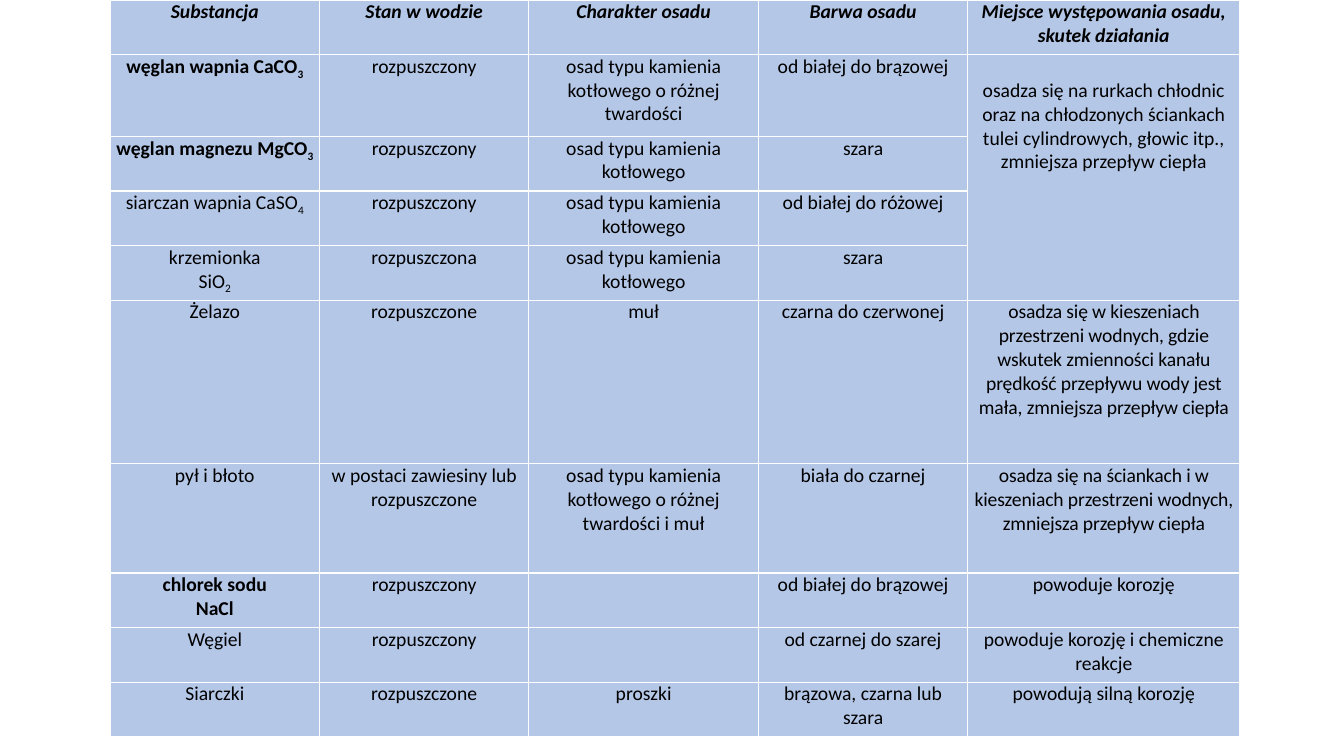
from lxml import etree
from pptx import Presentation, util as u
from pptx.dml.color import RGBColor
from pptx.enum import text
from pptx.oxml.ns import qn

COLORS = {"cell": "B4C7E7", "ink": "000000", "border": "FFFFFF"}
FONT, SIZE = "Calibri", 14
COLUMN_WIDTHS = [2.08, 2.07, 2.28, 2.07, 2.7]
ROW_UNITS = [1, 1.5, 1, 1, 1, 3, 2, 1, 1, 1]
LINE_HEIGHT = 0.24

# Markup: "~" no-break space, "_" subscript that follows, "\n" new paragraph
HEADER = ["Substancja", "Stan w wodzie", "Charakter osadu", "Barwa osadu",
          "Miejsce występowania osadu, skutek działania"]
SCALE = "osad typu kamienia kotłowego"
COOLING = ("osadza się na rurkach chłodnic oraz na~chłodzonych ściankach "
           "tulei cylindrowych, głowic itp.,\nzmniejsza przepływ ciepła")
POCKETS = ("osadza się w~kieszeniach przestrzeni wodnych, gdzie wskutek "
           "zmienności kanału prędkość przepływu wody jest mała, "
           "zmniejsza przepływ ciepła")
WALLS = ("osadza się na~ściankach i~w kieszeniach przestrzeni wodnych, "
         "zmniejsza przepływ ciepła")
SUBSTANCES = [
    ["węglan wapnia CaCO_3", "rozpuszczony", SCALE + " o różnej twardości",
     "od białej do~brązowej", COOLING],
    ["węglan magnezu MgCO_3", "rozpuszczony", SCALE, "szara", ""],
    ["siarczan wapnia CaSO_4", "rozpuszczony", SCALE, "od białej do różowej", ""],
    ["krzemionka\nSiO_2", "rozpuszczona", SCALE, "szara", ""],
    ["Żelazo", "rozpuszczone", "muł", "czarna do~czerwonej", POCKETS],
    ["pył i błoto", "w postaci zawiesiny lub rozpuszczone",
     SCALE + " o różnej twardości i muł", "biała do czarnej", WALLS],
    ["chlorek sodu\nNaCl", "rozpuszczony", "", "od białej do~brązowej",
     "powoduje korozję"],
    ["Węgiel", "rozpuszczony", "", "od czarnej do~szarej",
     "powoduje korozję i~chemiczne reakcje"],
    ["Siarczki", "rozpuszczone", "proszki", "brązowa, czarna lub szara",
     "powodują silną korozję"],
]
BOLD_ROWS = {1, 2, 7}


def style_cell(cell):
    """Margins, white borders and fill of one cell."""
    cell.margin_left = cell.margin_right = u.Inches(0.05)
    cell.margin_top = cell.margin_bottom = 0
    properties = cell._tc.get_or_add_tcPr()
    for side in ("lnL", "lnR", "lnT", "lnB"):
        line = etree.SubElement(properties, qn("a:" + side), w=str(u.Pt(1)))
        fill = etree.SubElement(line, qn("a:solidFill"))
        etree.SubElement(fill, qn("a:srgbClr"), val=COLORS["border"])
    cell.fill.solid()
    cell.fill.fore_color.rgb = RGBColor.from_string(COLORS["cell"])


def add_span(para, words, bold, italic, subscript=False, tight=False):
    span = para.add_run()
    span.text = words.replace("~", chr(160))
    span.font.name, span.font.size = FONT, u.Pt(SIZE)
    span.font.bold, span.font.italic = bold, italic
    span.font.color.rgb = RGBColor.from_string(COLORS["ink"])
    properties = span._r.get_or_add_rPr()
    if subscript:
        properties.set("baseline", "-25000")
    if tight:
        properties.set("spc", "-10")


def write_cell(cell, content, bold=False, italic=False, before=3, after=3):
    """Centred paragraphs, with subscripts, in one cell."""
    lines = content.split("\n")
    for index, line in enumerate(lines):
        frame = cell.text_frame
        para = frame.add_paragraph() if index else frame.paragraphs[0]
        para.alignment = text.PP_ALIGN.CENTER
        para.space_before = u.Pt(0 if index else before)
        para.space_after = u.Pt(after if index == len(lines) - 1 else 0)
        base, _, subscript = line.partition("_")
        if base:
            add_span(para, base, bold, italic, tight=content in (POCKETS, WALLS))
        if subscript:
            add_span(para, subscript, bold, italic, subscript=True)


def deposit_table(page, left, top, width, height):
    rows = [HEADER] + SUBSTANCES
    frame = page.shapes.add_table(len(rows), len(HEADER), u.Inches(left),
                                  u.Inches(top), u.Inches(width), u.Inches(height))
    table = frame.table
    for column, share in zip(table.columns, COLUMN_WIDTHS):
        column.width = u.Inches(width * share / sum(COLUMN_WIDTHS))
    for row, units in zip(table.rows, ROW_UNITS):
        row.height = u.Inches(height * units / sum(ROW_UNITS))

    # Header and substance rows
    for r, row in enumerate(rows):
        for c, content in enumerate(row):
            cell = table.cell(r, c)
            style_cell(cell)
            if r == 0:
                last = c == len(HEADER) - 1
                write_cell(cell, content, True, True,
                           before=3 if last else 9, after=3 if last else 0)
            elif content == COOLING:
                write_cell(cell, content, before=0, after=2)
            else:
                write_cell(cell, content, bold=c == 0 and r in BOLD_ROWS)

    # Shared effect of the four scale-forming substances, one line lower
    shared = table.cell(1, 4)
    shared.merge(table.cell(4, 4))
    shared.margin_top = u.Inches(LINE_HEIGHT)


def main():
    deck = Presentation()
    deck.slide_width, deck.slide_height = u.Inches(13.33), u.Inches(7.5)
    page = deck.slides.add_slide(deck.slide_layouts[6])
    deposit_table(page, 1.09, 0, 11.21, 7.31)
    deck.save("out.pptx")


if __name__ == "__main__":
    main()
